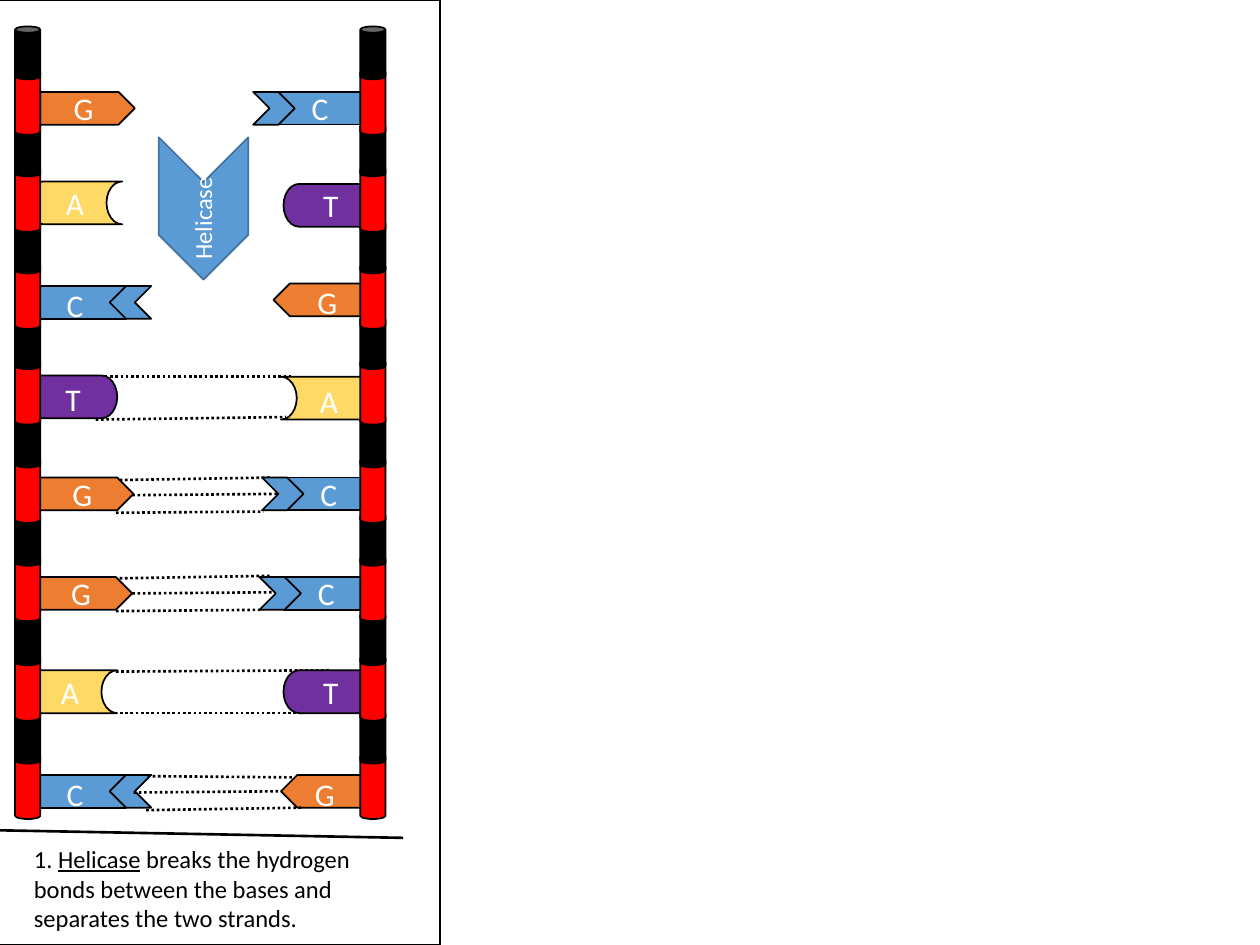
from lxml import etree
from pptx import Presentation
from pptx.dml.color import RGBColor
from pptx.enum import dml, shapes, text
from pptx.oxml import ns
from pptx.util import Inches, Pt

Kind = shapes.MSO_SHAPE
BLACK, WHITE, RED, BLUE = "000000", "FFFFFF", "FF0000", "5B9BD5"
BASES = {
    "A": (Kind.FLOWCHART_STORED_DATA, 0.75, 0.34, "FFD966"),
    "T": (Kind.FLOWCHART_STORED_DATA, 0.75, 0.34, "7030A0"),
    "G": (Kind.PENTAGON, 0.75, 0.26, "ED7D31"),
    "C": (Kind.RECTANGLE, 0.68, 0.26, BLUE),
}
TOPS = [0.21, 0.98, 1.75, 2.51, 3.29, 4.07, 4.86, 5.64]
PAIRS = [
    (("G", 0.32, 0.52, None), ("C", 2.2, 0.52, None)),
    (("A", 0.22, 0.46, None), ("T", 2.25, 0.48, None)),
    (("C", 0.32, 0.52, 0.11), ("G", 2.17, 0.5, 0.25)),
    (("T", 0.18, 0.47, 0.24), ("A", 2.23, 0.48, 0.21)),
    (("G", 0.31, 0.5, None), ("C", 2.27, 0.5, None)),
    (("G", 0.3, 0.51, None), ("C", 2.25, 0.51, None)),
    (("A", 0.18, 0.46, None), ("T", 2.25, 0.46, None)),
    (("C", 0.32, 0.51, 0.11), ("G", 2.23, 0.51, 0.17)),
]
TRIPLE = [(0.95, 0.52, 2.16, 0.5), (0.92, 0.78, 2.09, 0.77), (1.05, 0.64, 2.22, 0.63)]
BONDS = {
    3: [(0.79, 0.48, 2.31, 0.48), (0.76, 0.82, 2.27, 0.8)],
    4: TRIPLE,
    5: TRIPLE,
    6: [(0.92, 0.47, 2.62, 0.46), (0.91, 0.8, 2.62, 0.8)],
    7: [(1.17, 0.52, 2.32, 0.53), (1.16, 0.79, 2.4, 0.77), (1.06, 0.65, 2.23, 0.64)],
}


def rgb(code):
    return RGBColor.from_string(code)


def style(runs, size, color):
    for run in runs:
        run.font.name = "Calibri"
        run.font.size = Pt(size)
        run.font.color.rgb = rgb(color)


def shape(page, kind, x, y, w, h, fill, turn=0, edge=BLACK):
    item = page.shapes.add_shape(kind, Inches(x), Inches(y), Inches(w), Inches(h))
    item.shadow.inherit = False
    item.fill.solid()
    item.fill.fore_color.rgb = rgb(fill)
    item.line.color.rgb = rgb(edge)
    item.line.width = Pt(1)
    item.rotation = turn
    return item


def label(page, x, y, w, h, parts, size, color, turn=0):
    item = page.shapes.add_textbox(Inches(x), Inches(y), Inches(w), Inches(h))
    item.rotation = turn
    item.text_frame.word_wrap = True
    para = item.text_frame.paragraphs[0]
    for part in parts:
        para.add_run().text = part
    style(para.runs, size, color)
    return para.runs


def line(page, x, y, right, low, dash=None):
    item = page.shapes.add_connector(
        shapes.MSO_CONNECTOR.STRAIGHT, Inches(x), Inches(y), Inches(right), Inches(low))
    item.line.color.rgb = rgb(BLACK)
    item.line.width = Pt(1.5)
    if dash:
        item.line.dash_style = dash
    etree.SubElement(item._element.spPr, ns.qn("a:effectLst"))


def base(page, name, x, y, mark):
    kind, w, h, fill = BASES[name]
    turn = 0 if mark is None else 180
    item = shape(page, kind, x, y, w, h, fill, turn)
    if name == "C":
        shape(page, Kind.CHEVRON, x + (0.55 if turn else -0.19), y, 0.33, h, fill, turn)
    if turn:
        label(page, x + mark, y + (h - 0.36) / 2, 0.4, 0.36, [name], 18, WHITE)
    else:
        frame = item.text_frame
        frame.text = name
        frame.vertical_anchor = text.MSO_ANCHOR.MIDDLE
        frame.paragraphs[0].alignment = text.PP_ALIGN.CENTER
        style(frame.paragraphs[0].runs, 18, WHITE)


def pair(page, left, top, bases):
    for (name, x, y, mark), can in zip(bases, (0.12, 2.86)):
        base(page, name, left + x, top + y, mark)
        shape(page, Kind.CAN, left + can, top + 0.34, 0.2, 0.52, RED)
        shape(page, Kind.CAN, left + can, top, 0.2, 0.42, BLACK)


def bond(page, left, top, ends):
    for x, y, right, low in ends:
        line(page, left + x, top + y, left + right, top + low, dml.MSO_LINE.ROUND_DOT)


def enzyme(page, left, top):
    shape(page, Kind.CHEVRON, left, top, 1.13, 0.71, BLUE, 90, "43739E")
    label(page, left + 0.02, top + 0.15, 1.08, 0.34, ["Helicase"], 14, WHITE, 270)


def ladder(page, left, top):
    last = len(TOPS) - 1
    pair(page, left, top + TOPS[last], PAIRS[last])
    for row, ends in BONDS.items():
        bond(page, left, top + TOPS[row], ends)
    enzyme(page, left + 1.05, top + 1.3)
    for row in reversed(range(last)):
        pair(page, left, top + TOPS[row], PAIRS[row])


def caption(page, left, top):
    line(page, left, top, left + 3.2, top + 0.06)
    parts = ["1. ", "Helicase",
             " breaks the hydrogen bonds between the bases and separates the two strands."]
    runs = label(page, left + 0.17, top + 0.06, 2.88, 0.81, parts, 14, BLACK)
    runs[1].font.underline = True


def main():
    deck = Presentation()
    deck.slide_width, deck.slide_height = Inches(10), Inches(7.5)
    page = deck.slides.add_slide(deck.slide_layouts[6])
    shape(page, Kind.RECTANGLE, -0.01, 0, 3.5, 7.5, WHITE)
    ladder(page, 0, 0)
    caption(page, 0, 6.59)
    deck.save("out.pptx")


if __name__ == "__main__":
    main()
